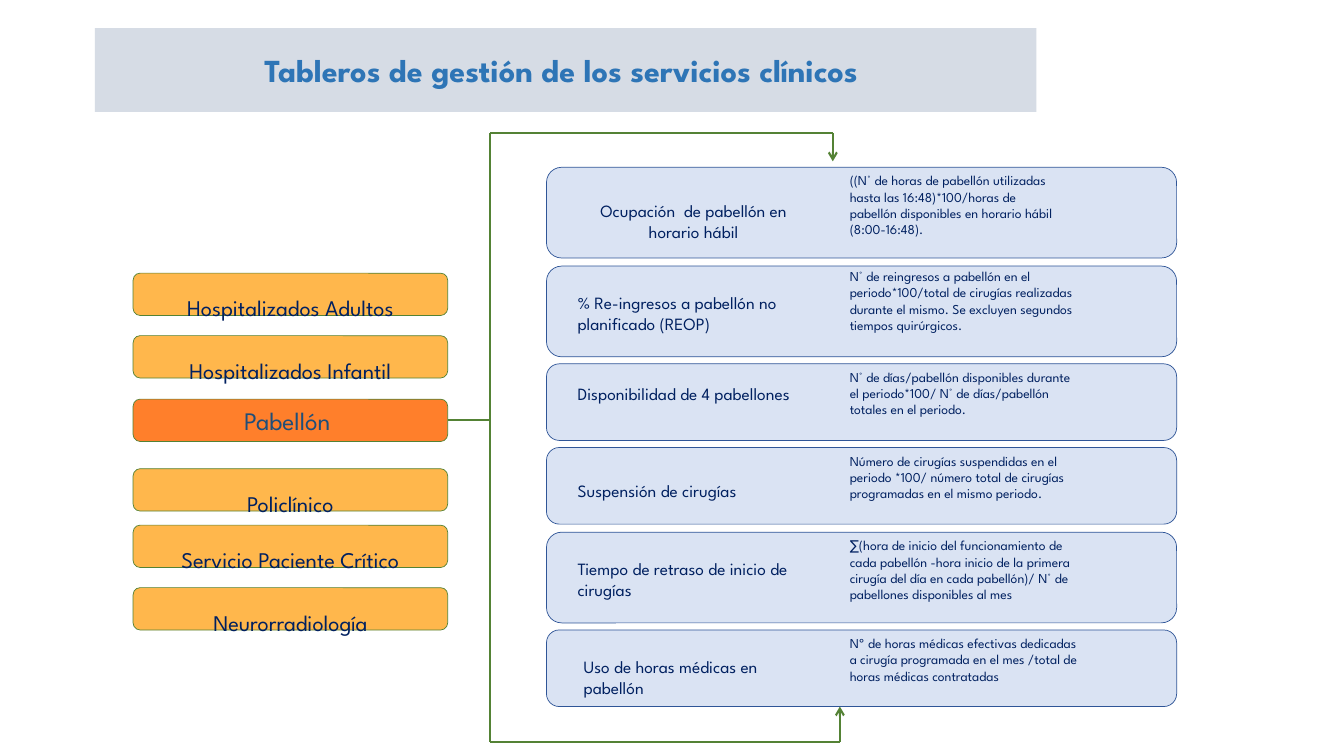
import pptx
import pptx.util
import pptx.dml.color
import pptx.enum.shapes
import pptx.enum.text
import pptx.oxml
import pptx.oxml.ns

SHAPE = pptx.enum.shapes.MSO_SHAPE
ALIGN = pptx.enum.text.PP_ALIGN
ANCHOR = pptx.enum.text.MSO_ANCHOR
DRAWING = pptx.oxml.ns.nsdecls("a")


def px(length):
    """100 px to the inch."""
    return pptx.util.Emu(length * 9144)


def color(value):
    return pptx.dml.color.RGBColor.from_string(value)


class Board:
    font = "League Spartan"
    navy = "002060"
    green = "548235"

    def __init__(self, slide):
        self.slide = slide

    def label(self, frame, text, size, ink=navy, bold=False, **layout):
        frame.word_wrap = True
        para = frame.paragraphs[0]
        for name, value in layout.items():
            setattr(para, name, value)
        span = para.add_run()
        span.text = text
        formats = {"name": self.font, "size": pptx.util.Pt(size), "bold": bold}
        for name, value in formats.items():
            setattr(span.font, name, value)
        span.font.color.rgb = color(ink)

    def shape(self, kind, frame, fill, line=None, opacity=None):
        box = self.slide.shapes.add_shape(kind, *map(px, frame))
        box.shadow.inherit = False
        box.fill.solid()
        box.fill.fore_color.rgb = color(fill)
        if opacity:
            tint = box._element.spPr.find(".//" + pptx.oxml.ns.qn("a:srgbClr"))
            tint.append(pptx.oxml.parse_xml(f'<a:alpha {DRAWING} val="{opacity * 1000}"/>'))
        if line:
            box.line.color.rgb = color(line)
            box.line.width = pptx.util.Pt(0.5)
        else:
            box.line.fill.background()
        box.text_frame.vertical_anchor = ANCHOR.MIDDLE
        return box

    def text(self, frame, text, size, alignment=ALIGN.LEFT):
        box = self.slide.shapes.add_textbox(*map(px, frame))
        box.text_frame.auto_size = pptx.enum.text.MSO_AUTO_SIZE.SHAPE_TO_FIT_TEXT
        self.label(box.text_frame, text, size, alignment=alignment)

    def line(self, start, end, arrow=False):
        link = self.slide.shapes.add_connector(
            pptx.enum.shapes.MSO_CONNECTOR.STRAIGHT, *map(px, start + end))
        link.line.color.rgb = color(self.green)
        link.line.width = pptx.util.Pt(1.5)
        properties = link._element.spPr
        if arrow:
            properties.find(pptx.oxml.ns.qn("a:ln")).append(
                pptx.oxml.parse_xml(f'<a:tailEnd {DRAWING} type="arrow"/>'))
        properties.append(pptx.oxml.parse_xml(f"<a:effectLst {DRAWING}/>"))


# top, name
SERVICES = [
    (271, "Hospitalizados Adultos"),
    (333, "Hospitalizados Infantil"),
    (396, "Pabellón "),
    (465, "Policlínico"),
    (521, "Servicio Paciente Crítico"),
    (583, "Neurorradiología"),
]
ACTIVE = "Pabellón "

# card top, card height, name left, name top, name alignment, name,
# formula top, formula width, formula
INDICATORS = [
    (166, 90, 563, 194, ALIGN.CENTER, "Ocupación  de pabellón en horario hábil", 166, 229,
     "((N° de horas de pabellón utilizadas hasta las 16:48)*100/horas de "
     "pabellón disponibles en horario hábil (8:00-16:48)."),
    (264, 90, 563, 285, ALIGN.LEFT, "% Re-ingresos a pabellón no planificado (REOP)", 261, 250,
     "N° de reingresos a pabellón en el periodo*100/total de cirugías realizadas "
     "durante el mismo. Se excluyen segundos tiempos quirúrgicos."),
    (361, 76, 563, 375, ALIGN.LEFT, "Disponibilidad de 4 pabellones", 361, 250,
     "N° de días/pabellón disponibles durante el periodo*100/ "
     "N° de días/pabellón totales en el periodo."),
    (444, 76, 563, 472, ALIGN.LEFT, "Suspensión de cirugías", 444, 250,
     "Número de cirugías suspendidas en el periodo *100/ "
     "número total de cirugías programadas en el mismo periodo."),
    (528, 90, 563, 549, ALIGN.LEFT, "Tiempo de retraso de inicio de cirugías", 528, 250,
     "∑(hora de inicio del funcionamiento de cada pabellón -hora inicio de la primera "
     "cirugía del día en cada pabellón)/ N° de pabellones disponibles al mes"),
    (625, 76, 569, 646, ALIGN.LEFT, "Uso de horas médicas en pabellón", 625, 250,
     "Nº de horas médicas efectivas dedicadas a cirugía programada en el mes "
     "/total de horas médicas contratadas"),
]


def main():
    deck = pptx.Presentation()
    deck.slide_width, deck.slide_height = px(1333), px(750)
    board = Board(deck.slides.add_slide(deck.slide_layouts[6]))

    # Clinical services
    for top, name in SERVICES:
        active = name == ACTIVE
        fill, opacity = ("FF6600", 83) if active else ("FF9900", 70)
        box = board.shape(SHAPE.ROUNDED_RECTANGLE, (132, top, 312, 42),
                          fill, board.green, opacity)
        if active:
            board.label(box.text_frame, name, 18, "1F4E79", alignment=ALIGN.CENTER)
        else:
            board.label(box.text_frame, name, 16, alignment=ALIGN.CENTER, line_spacing=2.0)

    # Indicator cards
    for (top, height, name_left, name_top, alignment, name,
         formula_top, formula_width, formula) in INDICATORS:
        board.shape(SHAPE.ROUNDED_RECTANGLE, (542, top, 625, height), "DAE3F3", "2F5597")
        board.text((name_left, name_top, 250, 52), name, 12.3, alignment)
        board.text((833, formula_top, formula_width, 75), formula, 9.7)

    # Bracket from the active service to the cards
    trunk, upper, lower = 486, 132, 736
    board.line((trunk, 417), (444, 417))
    board.line((trunk, upper), (trunk, lower))
    for x, y, tip in ((826, upper, 160), (833, lower, 701)):
        board.line((x, y), (trunk, y))
        board.line((x, y), (x, tip), arrow=True)

    # Title band
    band = board.shape(SHAPE.RECTANGLE, (94, 28, 934, 83), "D6DCE5")
    board.label(band.text_frame, "Tableros de gestión de los servicios clínicos ", 22.9,
                "2E75B6", bold=True, alignment=ALIGN.CENTER)

    deck.save("out.pptx")


if __name__ == "__main__":
    main()
